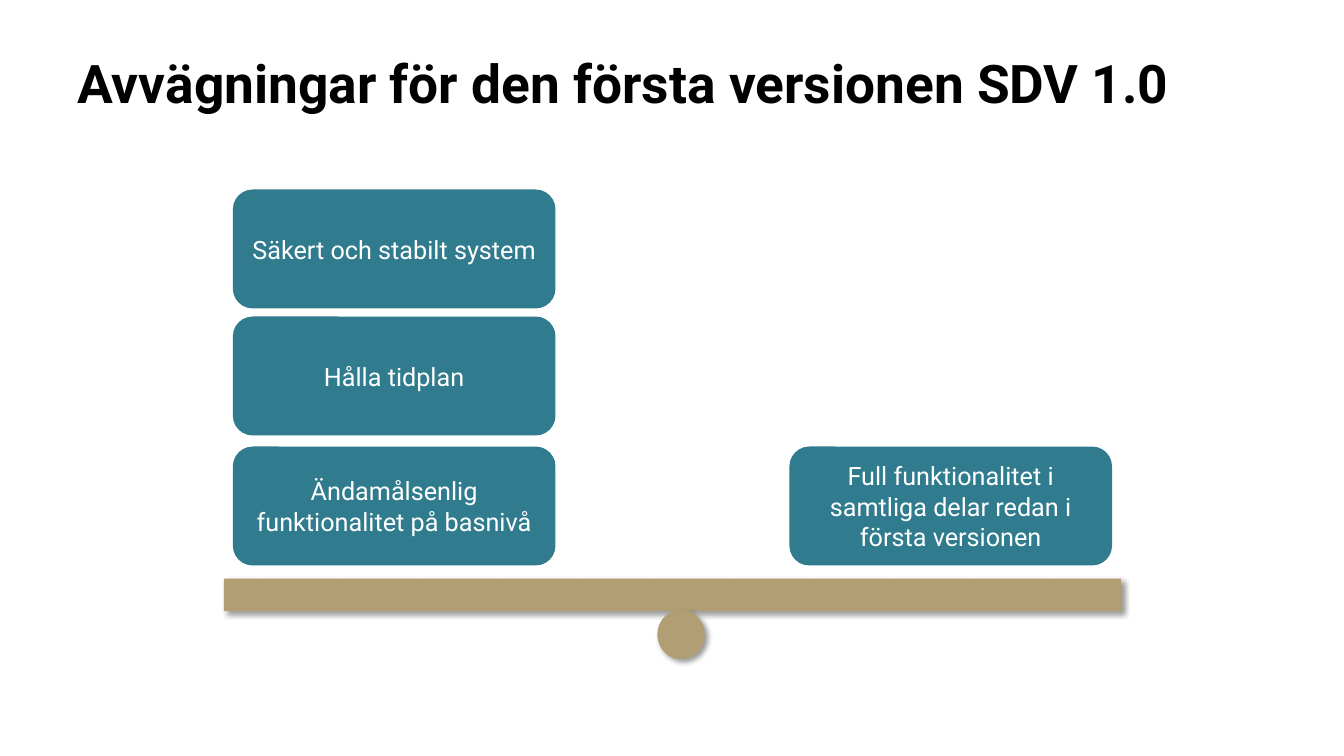
"""Build a slide that weighs three priorities against full functionality on a seesaw."""
from lxml.etree import SubElement
from pptx import Presentation
from pptx.dml.color import RGBColor
from pptx.enum.shapes import MSO_SHAPE
from pptx.enum.text import MSO_ANCHOR, PP_ALIGN
from pptx.oxml.ns import qn
from pptx.util import Inches, Pt

THEME = {
    "font": "Roboto",
    "title": RGBColor(0x00, 0x00, 0x00),
    "box": RGBColor(0x30, 0x7C, 0x8E),
    "label": RGBColor(0xFF, 0xFF, 0xFF),
    "scale": RGBColor(0xB1, 0x9E, 0x75),
    "shadow": "000000",
    "title_size": Pt(38),
    "label_size": Pt(18),
}
LEFT, RIGHT = 2.31, 7.83
TOP, MIDDLE, BOTTOM = 1.88, 3.14, 4.43
BOX_W, BOX_H = 3.2, 1.18


def set_text(tf, text, size, color, bold=False):
    tf.word_wrap = True
    tf.text = text
    font = tf.paragraphs[0].runs[0].font
    font.name, font.size, font.bold = THEME["font"], size, bold
    font.color.rgb = color


def add_solid(shapes, kind, box, color):
    sp = shapes.add_shape(kind, *[Inches(v) for v in box])
    sp.shadow.inherit = False
    sp.fill.solid()
    sp.fill.fore_color.rgb = color
    sp.line.fill.background()
    return sp


prs = Presentation()
prs.slide_width, prs.slide_height = Inches(13.33), Inches(7.5)
s = prs.slides.add_slide(prs.slide_layouts[6])

title = s.shapes.add_textbox(Inches(0.67), Inches(0.39), Inches(12.23), Inches(1.25))
set_text(title.text_frame, "Avvägningar för den första versionen SDV 1.0",
         THEME["title_size"], THEME["title"], bold=True)
title.text_frame.paragraphs[0].line_spacing = 1.1

seesaw = s.shapes.add_group_shape().shapes

for kind, box in [
    (MSO_SHAPE.RECTANGLE, (2.22, 5.74, 8.9, 0.32)),
    (MSO_SHAPE.OVAL, (6.52, 6.05, 0.47, 0.49)),
]:
    sp = add_solid(seesaw, kind, box, THEME["scale"])
    effects = sp._element.spPr.find(qn("a:effectLst"))
    shadow = SubElement(effects, qn("a:outerShdw"), blurRad=str(Pt(4)), dist=str(Pt(3)),
                        dir=str(45 * 60000), algn="tl", rotWithShape="0")
    tint = SubElement(shadow, qn("a:srgbClr"), val=THEME["shadow"])
    SubElement(tint, qn("a:alpha"), val="40000")

for x, y, text in [
    (LEFT, TOP, "Säkert och stabilt system"),
    (LEFT, MIDDLE, "Hålla tidplan"),
    (LEFT, BOTTOM, "Ändamålsenlig funktionalitet på basnivå"),
    (RIGHT, BOTTOM, "Full funktionalitet i samtliga delar redan i första versionen"),
]:
    sp = add_solid(seesaw, MSO_SHAPE.ROUNDED_RECTANGLE, (x, y, BOX_W, BOX_H), THEME["box"])
    tf = sp.text_frame
    set_text(tf, text, THEME["label_size"], THEME["label"])
    tf.vertical_anchor = MSO_ANCHOR.MIDDLE
    tf.paragraphs[0].alignment = PP_ALIGN.CENTER

prs.save("out.pptx")
